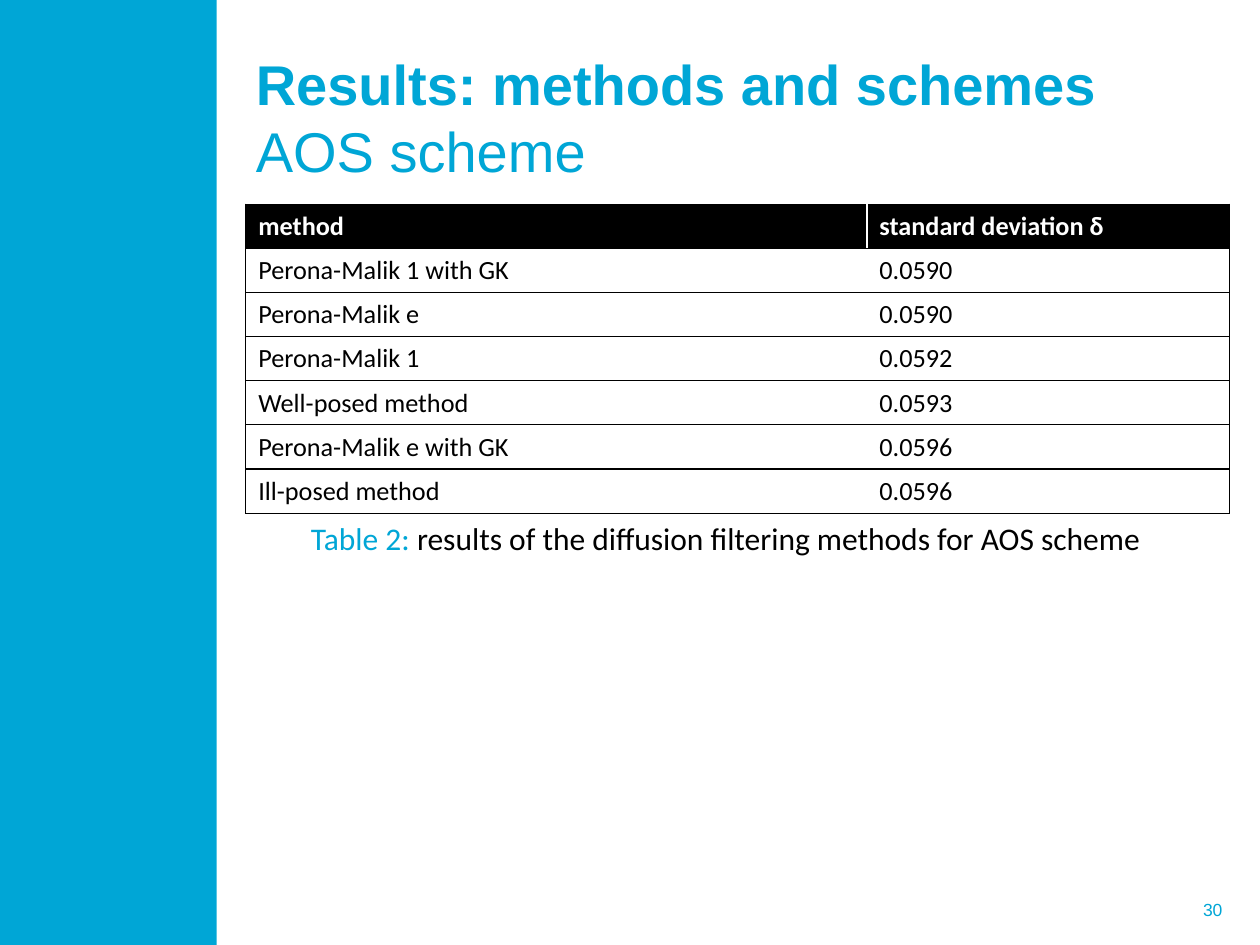
from pptx import Presentation
from pptx.dml.color import RGBColor
from pptx.enum import shapes, text
from pptx.oxml import parse_xml
from pptx.oxml.ns import nsdecls
from pptx.util import Inches, Pt

CYAN, BLACK, WHITE = "00A6D6", "000000", "FFFFFF"


def rgb(value):
    return RGBColor.from_string(value)


def add_run(p, content, size, font, color, bold=False):
    r = p.add_run()
    r.text = content
    r.font.size = Pt(size)
    r.font.name = font
    r.font.bold = bold
    r.font.color.rgb = rgb(color)


prs = Presentation()
prs.slide_width, prs.slide_height = Inches(10), Inches(7.5)
s = prs.slides.add_slide(prs.slide_layouts[5])

sidebar = s.shapes.add_shape(shapes.MSO_SHAPE.RECTANGLE, 0, 0, Inches(1.72), Inches(7.5))
sidebar.shadow.inherit = False
sidebar.fill.solid()
sidebar.fill.fore_color.rgb = rgb(CYAN)
sidebar.line.fill.background()

number = s.shapes.add_textbox(Inches(7.27), Inches(7.02), Inches(2.53), Inches(0.4))
tf = number.text_frame
tf.word_wrap = True
tf.vertical_anchor = text.MSO_ANCHOR.MIDDLE
p = tf.paragraphs[0]
p.alignment = text.PP_ALIGN.RIGHT
add_run(p, "30", 10, "Arial", CYAN)

title = s.shapes.title
title.left, title.top = Inches(1.93), Inches(0.3)
title.width, title.height = Inches(7.77), Inches(1.25)
tf = title.text_frame
tf.word_wrap = True
tf.auto_size = text.MSO_AUTO_SIZE.NONE
tf.vertical_anchor = text.MSO_ANCHOR.MIDDLE
p = tf.paragraphs[0]
p.alignment = text.PP_ALIGN.LEFT
add_run(p, "Results: methods and schemes", 32, "Arial", CYAN, True)
p.add_line_break()
add_run(p, "AOS scheme", 32, "Arial", CYAN)

rows = [
    ("method", "standard deviation δ"),
    ("Perona-Malik 1 with GK", "0.0590"),
    ("Perona-Malik e", "0.0590"),
    ("Perona-Malik 1", "0.0592"),
    ("Well-posed method", "0.0593"),
    ("Perona-Malik e with GK", "0.0596"),
    ("Ill-posed method", "0.0596"),
]
frame = s.shapes.add_table(len(rows), 2, Inches(1.95), Inches(1.62), Inches(7.81), Inches(2.45))
table = frame.table
table.columns[0].width, table.columns[1].width = Inches(4.93), Inches(2.88)
for i, row in enumerate(rows):
    table.rows[i].height = Inches(0.32)
    header = i == 0
    for j, content in enumerate(row):
        cell = table.cell(i, j)
        add_run(cell.text_frame.paragraphs[0], content, 15, "Calibri",
                WHITE if header else BLACK, header)
        for side in ("lnL" if j == 0 else "lnR", "lnT", "lnB"):
            cell._tc.get_or_add_tcPr().append(parse_xml(
                f'<a:{side} {nsdecls("a")} w="{Pt(0.75)}"><a:solidFill>'
                f'<a:srgbClr val="{BLACK}"/></a:solidFill></a:{side}>'))
        cell.fill.solid()
        cell.fill.fore_color.rgb = rgb(BLACK if header else WHITE)

caption = s.shapes.add_textbox(Inches(2.37), Inches(4.07), Inches(6.87), Inches(0.4))
tf = caption.text_frame
tf.word_wrap = False
tf.auto_size = text.MSO_AUTO_SIZE.SHAPE_TO_FIT_TEXT
p = tf.paragraphs[0]
add_run(p, "Table 2: ", 18, "Calibri", CYAN)
add_run(p, "results of the diffusion filtering methods for AOS scheme", 18, "Calibri", BLACK)

prs.save("out.pptx")
